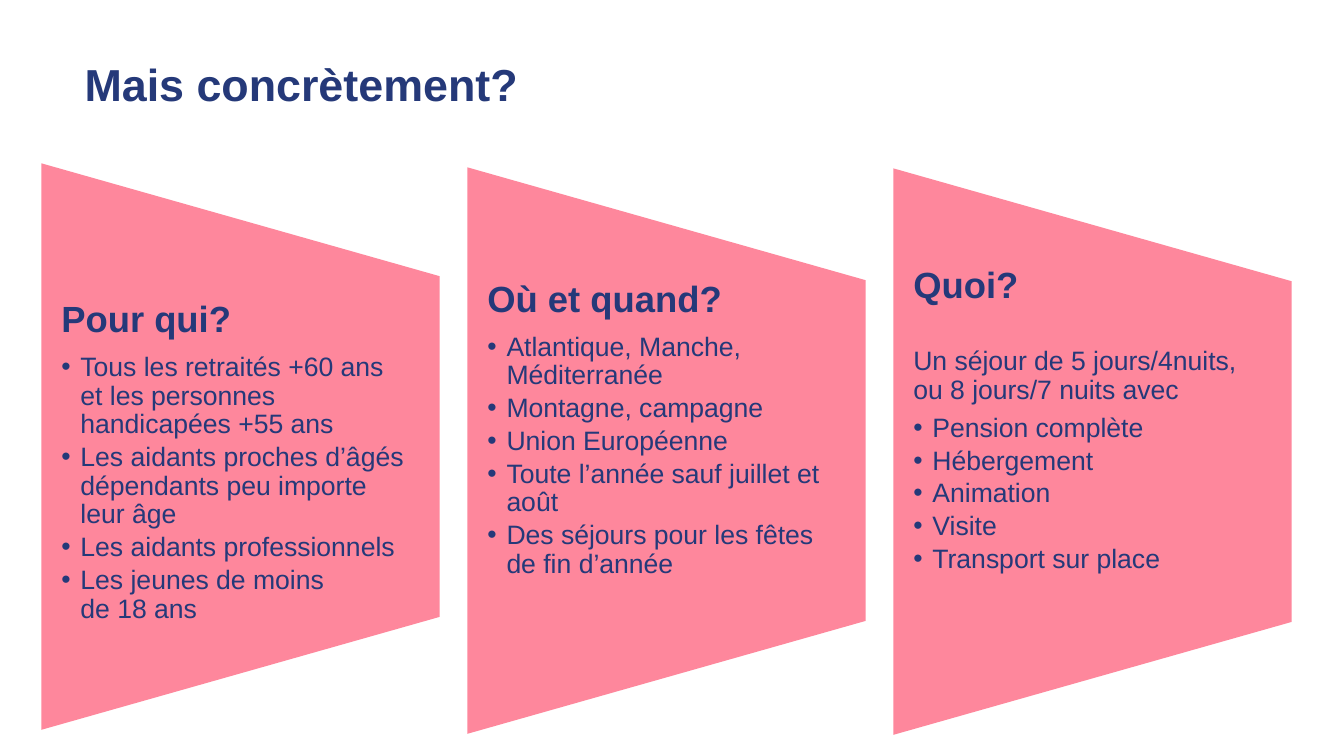
from lxml import etree
from pptx import Presentation
from pptx.dml.color import RGBColor as RGB
from pptx.enum.text import MSO_ANCHOR as Anchor
from pptx.oxml.ns import qn
from pptx.util import Inches, Pt

NAVY, PINK = "253979", "FE879C"
HEAD, BODY = 26, 19
PITCH = 4.225  # distance between panel left edges

# Panel top, right edge height, text top, text width, heading, lead-in, bullets
PANELS = [
    (1.62, 2.94, 3.6, "Pour qui?", None, [
        "Tous les retraités +60 ans et les personnes handicapées +55 ans",
        "Les aidants proches d’âgés dépendants peu importe leur âge",
        "Les aidants professionnels",
        "Les jeunes de moins\vde 18 ans"]),
    (1.66, 2.74, 3.51, "Où et quand?", None, [
        "Atlantique, Manche, Méditerranée",
        "Montagne, campagne",
        "Union Européenne",
        "Toute l’année sauf juillet et août",
        "Des séjours pour les fêtes de fin d’année"]),
    (1.67, 2.55, 3.56, "Quoi?",
     "Un séjour de 5 jours/4nuits, ou 8 jours/7 nuits avec", [
         "Pension complète", "Hébergement", "Animation", "Visite",
         "Transport sur place"]),
]


def color(code):
    return RGB.from_string(code)


def add_box(slide, left, top, width, height):
    frame = slide.shapes.add_textbox(
        Inches(left), Inches(top), Inches(width), Inches(height)).text_frame
    frame.word_wrap = True
    return frame


def add_bullet(para):
    props = para._p.get_or_add_pPr()
    props.set("marL", str(Inches(0.19)))
    props.set("indent", str(-Inches(0.19)))
    etree.SubElement(props, qn("a:buFont")).set("typeface", "Arial")
    etree.SubElement(props, qn("a:buChar")).set("char", "•")


def write(para, text, size, bold=False, after=0, line=0.9):
    para.text = text
    para.line_spacing = line
    para.space_after = Pt(after)
    font = para.font
    font.name, font.size, font.bold = "Arial", Pt(size), bold
    font.color.rgb = color(NAVY)


def add_panel(slide, left, top):
    right, base, slant = left + 3.95, top + 5.62, 1.12
    path = slide.shapes.build_freeform(Inches(left), Inches(base))
    path.add_line_segments([
        (Inches(left), Inches(top)),
        (Inches(right), Inches(top + slant)),
        (Inches(right), Inches(base - slant))], close=True)
    shape = path.convert_to_shape()
    shape.shadow.inherit = False
    shape.fill.solid()
    shape.fill.fore_color.rgb = color(PINK)
    shape.line.fill.background()


def add_copy(slide, left, top, width, head, lead, items):
    frame = add_box(slide, left, top, width, 3.8)
    para = frame.paragraphs[0]
    if lead:
        write(para, head, HEAD, True, after=30, line=1.0)
        write(frame.add_paragraph(), lead, BODY, after=6.65)
    else:
        write(para, head, HEAD, True, after=9.1)
    for item in items:
        para = frame.add_paragraph()
        add_bullet(para)
        write(para, item, BODY, after=2.85)


def main():
    deck = Presentation()
    deck.slide_width, deck.slide_height = Inches(13.33), Inches(7.5)
    slide = deck.slides.add_slide(deck.slide_layouts[6])

    # Title
    title = add_box(slide, 0.74, 0.47, 11.5, 0.78)
    title.vertical_anchor = Anchor.MIDDLE
    write(title.paragraphs[0], "Mais concrètement?", 32, True)

    # Three panels with their text
    for i, (top, start, width, head, lead, items) in enumerate(PANELS):
        left = 0.41 + i * PITCH
        add_panel(slide, left, top)
        add_copy(slide, left + 0.1, start, width, head, lead, items)

    deck.save("out.pptx")


if __name__ == "__main__":
    main()
